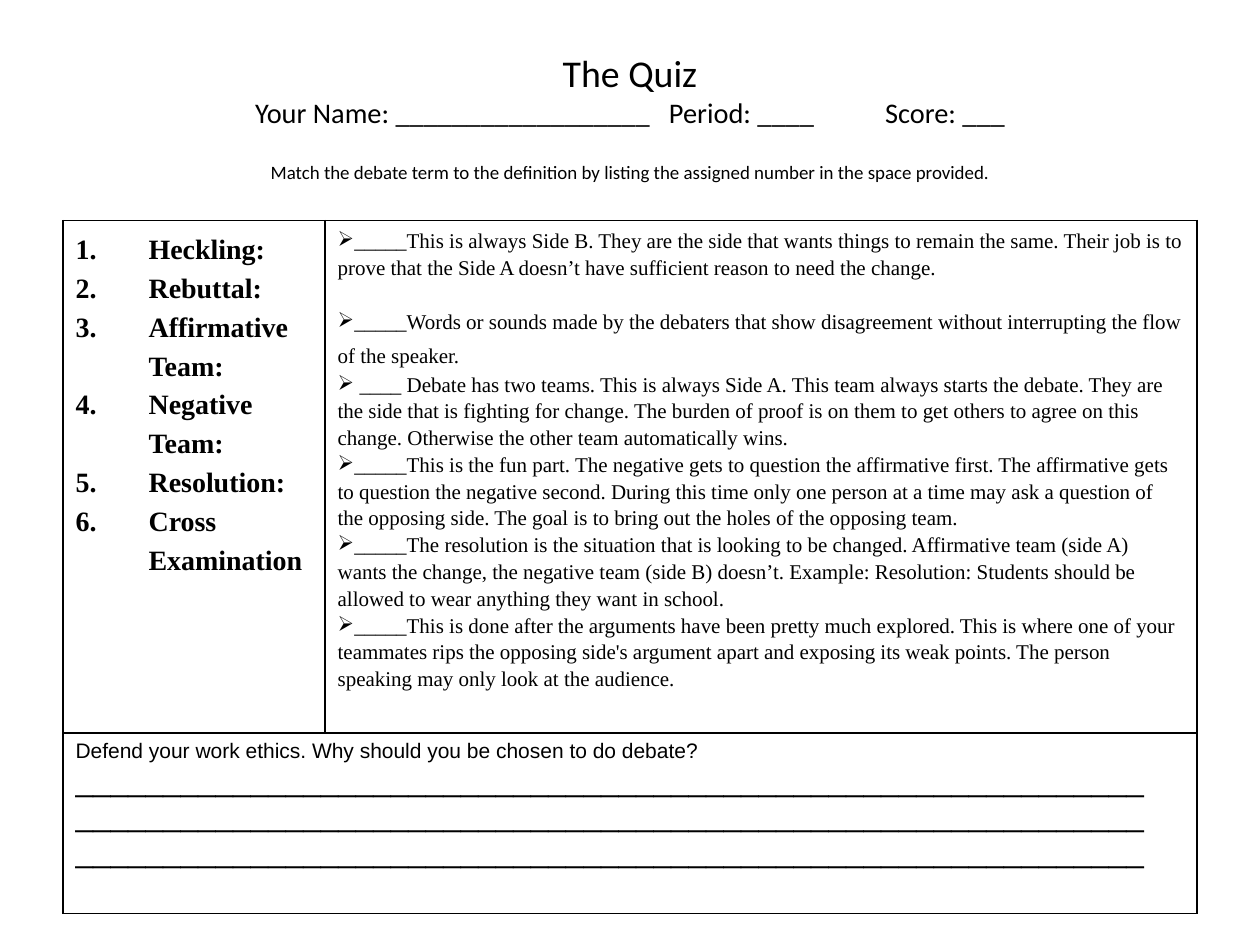
import pptx
import pptx.dml.color
import pptx.enum.text
import pptx.oxml.ns
import pptx.util
from lxml import etree

BLACK = pptx.dml.color.RGBColor(0, 0, 0)
SERIF = "Times New Roman"
HANGING = pptx.util.Inches(0.58)

presentation = pptx.Presentation()
presentation.slide_width = pptx.util.Inches(10)
presentation.slide_height = pptx.util.Inches(7.5)
slide = presentation.slides.add_slide(presentation.slide_layouts[6])
margin = presentation.slide_width // 20
content_width = presentation.slide_width - 2 * margin


def add_run(paragraph, text, size, font, bold=False):
    run = paragraph.add_run()
    run.text = text
    run.font.size = pptx.util.Pt(size)
    run.font.name = font
    run.font.bold = bold
    run.font.color.rgb = BLACK


def add_element(parent, tag, **attributes):
    return etree.SubElement(parent, pptx.oxml.ns.qn(tag), attributes)


heading = slide.shapes.add_textbox(
    margin, int(presentation.slide_height * 0.04), content_width, presentation.slide_height // 6
).text_frame
heading.word_wrap = True
heading.vertical_anchor = pptx.enum.text.MSO_ANCHOR.MIDDLE
heading_lines = [
    ("The Quiz", 21.6, 0),
    ("Your Name: __________________   Period: ____ \t\tScore: ___", 16.2, 0),
    ("Match the debate term to the definition by listing the assigned number in the space provided.", 10.8, 18),
]
for index, (text, size, gap) in enumerate(heading_lines):
    paragraph = heading.add_paragraph() if index else heading.paragraphs[0]
    paragraph.alignment = pptx.enum.text.PP_ALIGN.CENTER
    paragraph.space_before = pptx.util.Pt(gap)
    add_run(paragraph, text, size, "Calibri")

row_heights = [pptx.util.Inches(3.78), pptx.util.Inches(1.43)]
table = slide.shapes.add_table(
    2, 2, margin, pptx.util.Inches(1.75), content_width, sum(row_heights)
).table
table.first_row = False
table.horz_banding = False
table.columns[0].width = pptx.util.Inches(2.08)
table.columns[1].width = content_width - table.columns[0].width
for row, height in zip(table.rows, row_heights):
    row.height = height
    for cell in row.cells:
        properties = cell._tc.get_or_add_tcPr()
        for side in ("a:lnL", "a:lnR", "a:lnT", "a:lnB"):
            line = add_element(properties, side, w=str(pptx.util.Pt(1)))
            fill = add_element(line, "a:solidFill")
            add_element(fill, "a:srgbClr", val=str(BLACK))
        cell.fill.background()
table.cell(1, 0).merge(table.cell(1, 1))

terms = ["Heckling:", "Rebuttal:", "Affirmative Team:", "Negative Team:", "Resolution:", "Cross Examination"]
term_frame = table.cell(0, 0).text_frame
for index, term in enumerate(terms):
    paragraph = term_frame.add_paragraph() if index else term_frame.paragraphs[0]
    paragraph.line_spacing = 1.25
    properties = paragraph._p.get_or_add_pPr()
    properties.set("marL", str(HANGING))
    properties.set("indent", str(-HANGING))
    add_element(properties, "a:buFont", typeface="+mj-lt")
    add_element(properties, "a:buAutoNum", type="arabicPeriod")
    add_run(paragraph, term, 16, SERIF, True)

definitions = [
    "_____This is always Side B. They are the side that wants things to remain the same. Their job is to prove that the Side A doesn’t have sufficient reason to need the change.",
    "_____Words or sounds made by the debaters that show disagreement without interrupting the flow of the speaker.",
    " ____ Debate has two teams. This is always Side A. This team always starts the debate. They are the side that is fighting for change. The burden of proof is on them to get others to agree on this change. Otherwise the other team automatically wins.",
    "_____This is the fun part. The negative gets to question the affirmative first. The affirmative gets to question the negative second. During this time only one person at a time may ask a question of the opposing side. The goal is to bring out the holes of the opposing team.",
    "_____The resolution is the situation that is looking to be changed. Affirmative team (side A) wants the change, the negative team (side B) doesn’t. Example: Resolution: Students should be allowed to wear anything they want in school.",
    "_____This is done after the arguments have been pretty much explored. This is where one of your teammates rips the opposing side's argument apart and exposing its weak points. The person speaking may only look at the audience.",
]
definition_frame = table.cell(0, 1).text_frame
for index, definition in enumerate(definitions):
    paragraph = definition_frame.add_paragraph() if index else definition_frame.paragraphs[0]
    paragraph.line_spacing = 1.15
    paragraph.space_after = pptx.util.Pt(0 if index else 15.4)
    properties = paragraph._p.get_or_add_pPr()
    properties.set("marL", "0")
    properties.set("indent", "0")
    add_element(properties, "a:buChar", char="➢")
    add_run(paragraph, definition, 12, SERIF)
    if index == 1:
        add_run(paragraph, " ", 16, SERIF)

essay_lines = [("Defend your work ethics. Why should you be chosen to do debate?", 12)]
essay_lines += [("_" * 61, 18)] * 3
essay_frame = table.cell(1, 0).text_frame
for index, (text, size) in enumerate(essay_lines):
    paragraph = essay_frame.add_paragraph() if index else essay_frame.paragraphs[0]
    add_run(paragraph, text, size, "Arial")

presentation.save("out.pptx")
